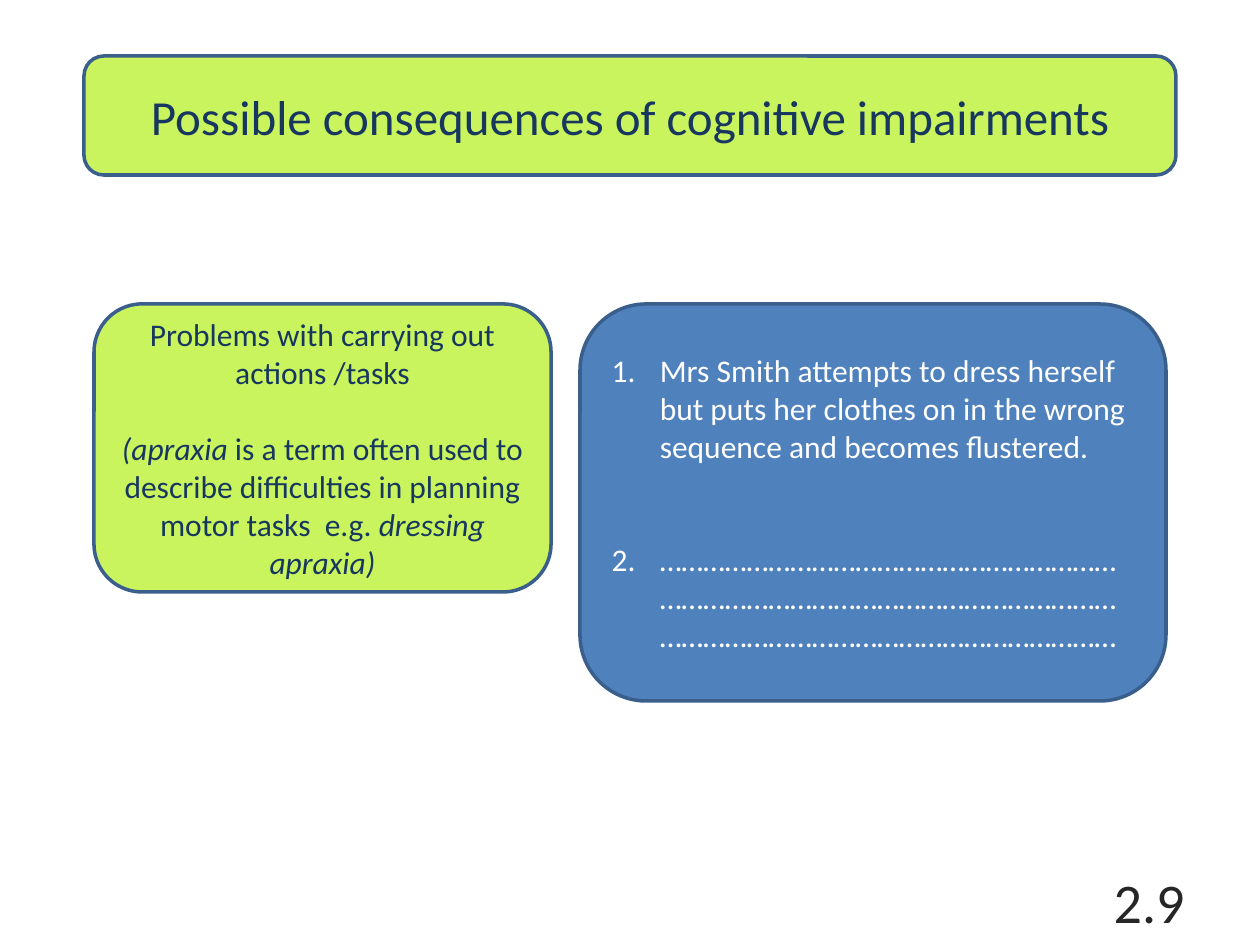
"""Build the slide on possible consequences of cognitive impairments."""
from pptx import Presentation, util as u
from pptx.dml.color import RGBColor
from pptx.enum import shapes, text
from pptx.oxml.ns import qn
from lxml import etree

LIME = RGBColor(0xC9, 0xF4, 0x5E)
BLUE = RGBColor(0x4F, 0x81, 0xBD)
EDGE = RGBColor(0x3A, 0x5F, 0x8C)
NAVY = RGBColor(0x17, 0x37, 0x5E)
WHITE = RGBColor(0xFF, 0xFF, 0xFF)
DARK = RGBColor(0x26, 0x26, 0x26)
LEFT, MID, RIGHT = text.PP_ALIGN.LEFT, text.PP_ALIGN.CENTER, text.PP_ALIGN.RIGHT
TOP = 304


def px(*nums):
    return [round(n * u.Inches(1) / 126) for n in nums]


def write(frame, paras, size=18, color=NAVY, align=MID, gap=0, count=False):
    frame.word_wrap = True
    frame.vertical_anchor = text.MSO_ANCHOR.MIDDLE
    for i, runs in enumerate(paras):
        para = frame.add_paragraph() if i else frame.paragraphs[0]
        para.alignment = align
        para.space_before = u.Pt(gap if i else 0)
        for words, slant in runs:
            run = para.add_run()
            run.text = words
            font = run.font
            font.name, font.size, font.italic = "Calibri", u.Pt(size), slant
            font.color.rgb = color
        if count:
            number(para, i + 1)


def number(para, start):
    props = para._p.get_or_add_pPr()
    dent = px(48)[0]
    props.set("marL", str(dent))
    props.set("indent", str(-dent))
    mark = etree.SubElement(props, qn("a:buAutoNum"))
    mark.set("type", "arabicPeriod")
    mark.set("startAt", str(start))


class Deck:
    def __init__(self):
        self.prs = Presentation()
        self.prs.slide_width, self.prs.slide_height = px(1260, 945)
        self.slide = self.prs.slides.add_slide(self.prs.slide_layouts[6])

    def panel(self, box, fill, paras, **style):
        shape = self.slide.shapes.add_shape(
            shapes.MSO_SHAPE.ROUNDED_RECTANGLE, *px(*box))
        shape.shadow.inherit = False
        shape.fill.solid()
        shape.fill.fore_color.rgb = fill
        shape.line.color.rgb = EDGE
        shape.line.width = u.Pt(2)
        write(shape.text_frame, paras, **style)

    def label(self, box, paras, **style):
        shape = self.slide.shapes.add_textbox(*px(*box))
        write(shape.text_frame, paras, **style)


def main():
    deck = Deck()
    deck.panel((84, 56, 1092, 119), LIME,
               [[("Possible consequences of cognitive impairments", False)]], size=28)
    deck.panel((94, TOP, 457, 288), LIME, [
        [("Problems with carrying out actions /tasks", False)],
        [("(apraxia", True),
         (" is a term often used to describe difficulties in planning "
          "motor tasks  e.g. ", False),
         ("dressing apraxia)", True)],
    ], gap=22)
    deck.panel((580, TOP, 586, 397), BLUE, [
        [("Mrs Smith attempts to dress herself but puts her clothes on "
          "in the wrong sequence and becomes flustered.", False)],
        [("…" * 63, False)],
    ], color=WHITE, align=LEFT, gap=43, count=True)
    deck.label((903, 876, 294, 50), [[("2.9", False)]],
               size=32, color=DARK, align=RIGHT)
    deck.prs.save("out.pptx")


if __name__ == "__main__":
    main()
